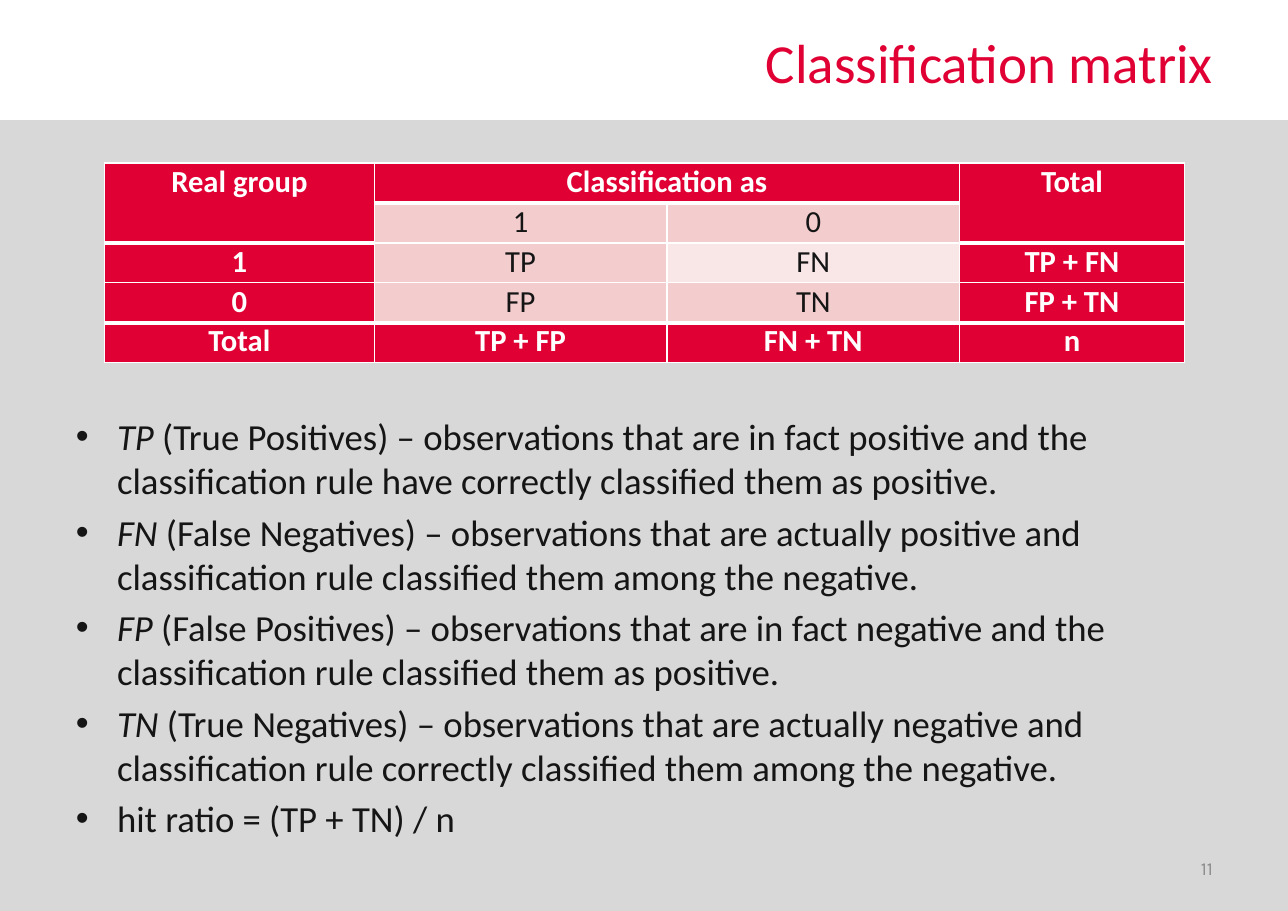
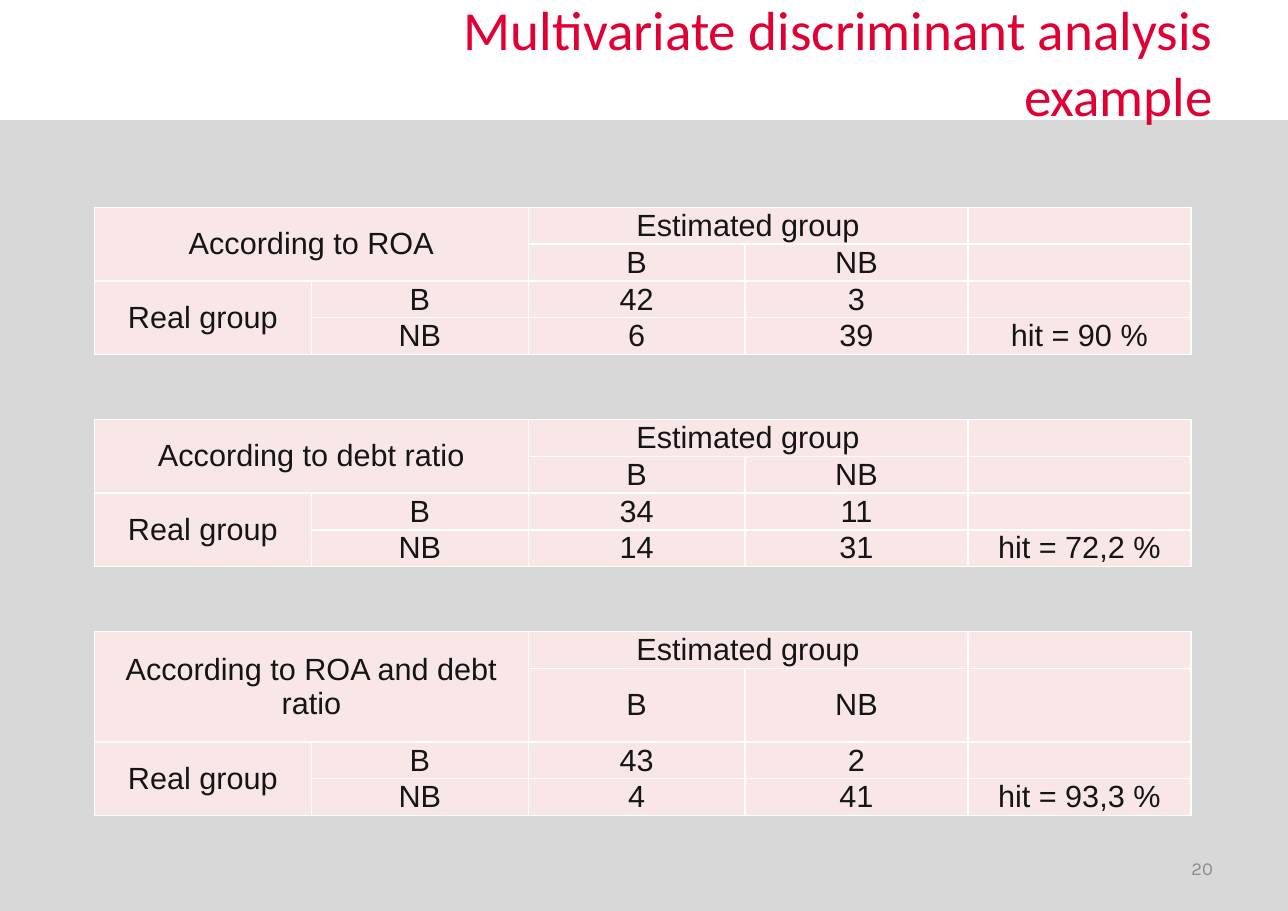
"""Builds two slides on classification matrices and discriminant analysis."""
from lxml import etree
from pptx import Presentation
from pptx.dml.color import RGBColor
from pptx.enum.shapes import MSO_SHAPE
from pptx.enum.text import MSO_ANCHOR, PP_ALIGN
from pptx.oxml.ns import qn
from pptx.util import Cm, Pt

RECT = MSO_SHAPE.RECTANGLE
TOP, MID = MSO_ANCHOR.TOP, MSO_ANCHOR.MIDDLE
LEFT, RIGHT, CENTER = PP_ALIGN.LEFT, PP_ALIGN.RIGHT, PP_ALIGN.CENTER

WIDE, HIGH, BAND = 29.7, 21, 2.77
RED, INK, GREY, NOTE = "E00034", "151515", "D8D8D8", "8C8C8C"
WHITE, ROSE, PALE = "FFFFFF", "F3CCCE", "F9E7E8"
FILLS = {"R": RED, "M": ROSE, "P": PALE}

TERMS = [
    ("TP", " (True Positives) – observations that are in fact positive and the "
           "classification rule have correctly classified them as positive."),
    ("FN", " (False Negatives) – observations that are actually positive and "
           "classification rule classified them among the negative."),
    ("FP", " (False Positives) – observations that are in fact negative and the "
           "classification rule classified them as positive."),
    ("TN", " (True Negatives) – observations that are actually negative and "
           "classification rule correctly classified them among the negative."),
    ("", "hit ratio = (TP + TN) / n"),
]

MATRIX = [
    ["Real group", "Classification as", "", "Total"],
    ["", "1", "0", ""],
    ["1", "TP", "FN", "TP + FN"],
    ["0", "FP", "TN", "FP + TN"],
    ["Total", "TP + FP", "FN + TN", "n"],
]
MATRIX_FILLS = ["RRRR", "RMMR", "RMPR", "RMMR", "RRRR"]
MATRIX_SPANS = [(0, 0, 1, 0), (0, 1, 0, 2), (0, 3, 1, 3)]
MATRIX_THICK = {(0, 1), (0, 2), (1, 0), (1, 3), (3, 0), (3, 1), (3, 2), (3, 3)}

TESTS = [
    ("According to ROA", ("42", "3"), ("6", "39"), "hit = 90 %"),
    ("According to debt ratio", ("34", "11"), ("14", "31"), "hit = 72,2 %"),
    ("According to ROA and debt ratio", ("43", "2"), ("4", "41"), "hit = 93,3 %"),
]
TEST_SPANS = [(0, 0, 1, 1), (0, 2, 0, 3), (2, 0, 3, 0)]


def tint(code):
    """Turn a hex string into a colour."""
    return RGBColor.from_string(code)


def write(para, text, size, face, color, bold=False, slant=False):
    """Add one run of styled text."""
    run = para.add_run()
    run.text = text
    font = run.font
    font.size, font.name = Pt(size), face
    font.bold, font.italic = bold, slant
    font.color.rgb = tint(color)


def box(slide, left, top, width, height, anchor=TOP):
    """Add a wrapping text box and return its frame."""
    shape = slide.shapes.add_textbox(Cm(left), Cm(top), Cm(width), Cm(height))
    frame = shape.text_frame
    frame.word_wrap = True
    frame.vertical_anchor = anchor
    return frame


def start(deck, title, page):
    """Add a slide with the shared band, title and page number."""
    slide = deck.slides.add_slide(deck.slide_layouts[6])
    band = slide.shapes.add_shape(RECT, 0, Cm(BAND), Cm(WIDE), Cm(HIGH - BAND))
    band.shadow.inherit = False
    band.fill.solid()
    band.fill.fore_color.rgb = tint(GREY)
    band.line.fill.background()
    head = box(slide, 7.6, 0.5, 20.62, 1.84, MID).paragraphs[0]
    head.alignment = RIGHT
    for i, line in enumerate(title.split("\n")):
        if i:
            head.add_line_break()
        write(head, line, 36, "Calibri", RED)
    foot = box(slide, 21.29, 19.46, 6.93, 1.12, MID).paragraphs[0]
    foot.alignment = RIGHT
    write(foot, page, 12, "Karla", NOTE)
    return slide


def edge(cell, sides):
    """Draw white cell borders from pairs of side and width."""
    props = cell._tc.get_or_add_tcPr()
    for i, (side, width) in enumerate(sides):
        line = etree.Element(qn("a:ln" + side), w=str(Pt(width)))
        fill = etree.SubElement(line, qn("a:solidFill"))
        etree.SubElement(fill, qn("a:srgbClr"), val=WHITE)
        props.insert(i, line)


def grid(slide, left, top, cols, row, cells, fills, spans, face, anchor, pad,
         thick=()):
    """Add a table; thick lists the cells with a heavy lower border."""
    count = len(cells)
    table = slide.shapes.add_table(count, len(cols), Cm(left), Cm(top),
                                   Cm(sum(cols)), Cm(row * count)).table
    table.first_row = table.horz_banding = False
    for c, width in enumerate(cols):
        table.columns[c].width = Cm(width)
    for r, texts in enumerate(cells):
        table.rows[r].height = Cm(row)
        for c, text in enumerate(texts):
            cell = table.cell(r, c)
            color = FILLS[fills[r][c]]
            cell.fill.solid()
            cell.fill.fore_color.rgb = tint(color)
            cell.margin_left = cell.margin_right = Cm(pad)
            cell.margin_top = cell.margin_bottom = 0
            cell.vertical_anchor = anchor
            above = 3 if (r - 1, c) in thick else 1
            below = 3 if (r, c) in thick else 1
            edge(cell, [("L", 1), ("R", 1), ("T", above), ("B", below)])
            if text:
                para = cell.text_frame.paragraphs[0]
                para.alignment = CENTER
                strong = color == RED
                write(para, text, 20, face, WHITE if strong else INK, strong)
    for r, c, low, far in spans:
        table.cell(r, c).merge(table.cell(low, far))


def terms(slide):
    """Add the bulleted list of terms."""
    frame = box(slide, 1.5, 9.42, 26.72, 10.7)
    for i, (term, text) in enumerate(TERMS):
        para = frame.add_paragraph() if i else frame.paragraphs[0]
        props = para._p.get_or_add_pPr()
        props.set("marL", str(Cm(0.95)))
        props.set("indent", str(-Cm(0.95)))
        etree.SubElement(props, qn("a:buFont"), typeface="Arial")
        etree.SubElement(props, qn("a:buChar"), char="•")
        para.alignment = LEFT
        if i:
            para.space_before = Pt(4.8)
        if term:
            write(para, term, 24, "Calibri", INK, slant=True)
        write(para, text, 24, "Calibri", INK)


def main():
    """Build and save the deck."""
    deck = Presentation()
    deck.slide_width, deck.slide_height = Cm(WIDE), Cm(HIGH)

    slide = start(deck, "Classification matrix", "11")
    terms(slide)
    grid(slide, 2.41, 3.76, [6.22, 6.75, 6.75, 5.18], 0.92, MATRIX,
         MATRIX_FILLS, MATRIX_SPANS, "Calibri", TOP, 0.18, MATRIX_THICK)

    slide = start(deck, "Multivariate discriminant analysis\nexample", "20")
    for i, (name, first, second, hit) in enumerate(TESTS):
        cells = [
            [name, "", "Estimated group", "", ""],
            ["", "", "B", "NB", ""],
            ["Real group", "B", *first, ""],
            ["", "NB", *second, hit],
        ]
        grid(slide, 2.18, 4.78 + 4.89 * i, [5, 5, 5, 5.14, 5.14], 0.46, cells,
             ["PPPPP"] * 4, TEST_SPANS, "Arial", MID, 0.2)

    deck.save("out.pptx")


if __name__ == "__main__":
    main()
